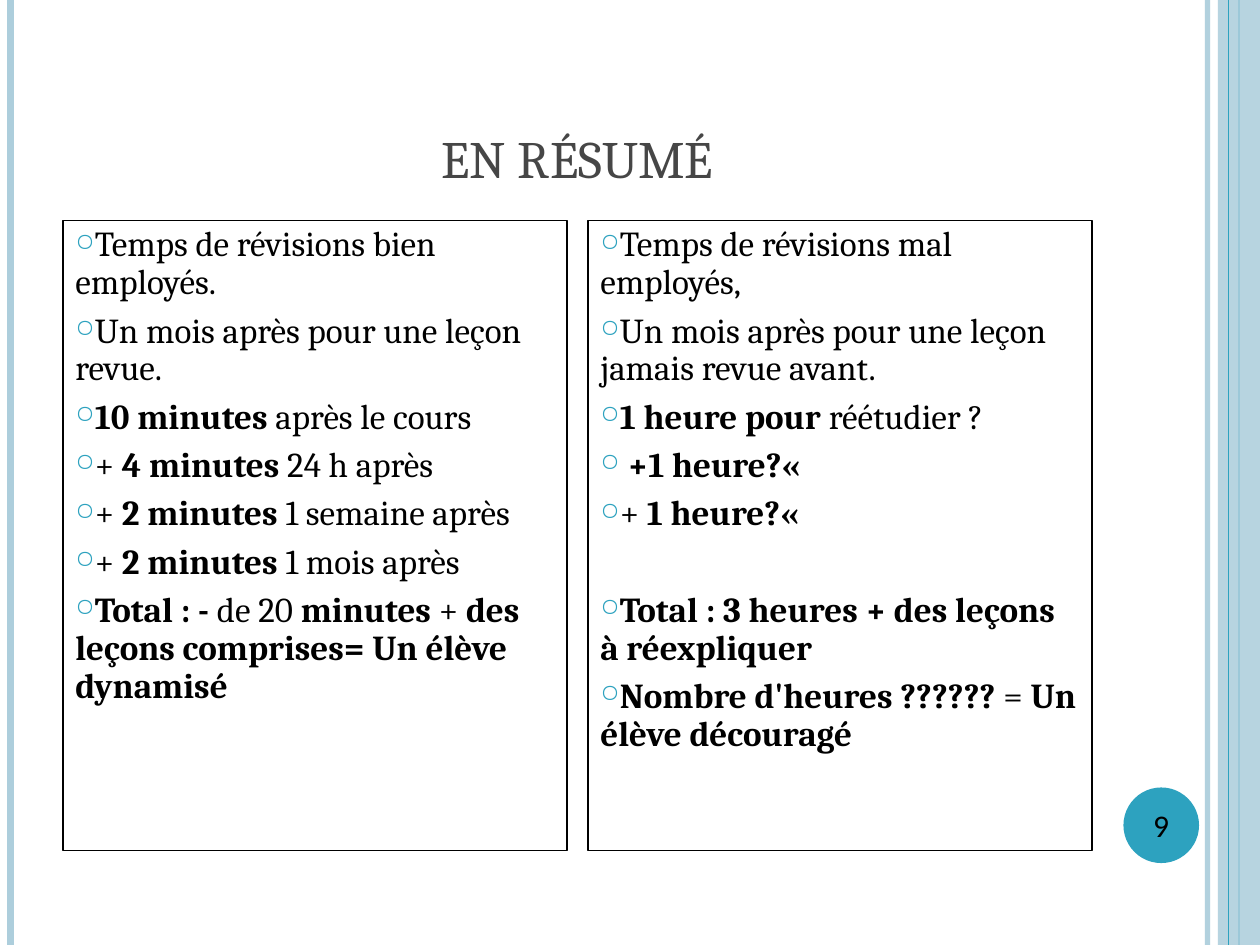
from lxml import etree
from pptx import Presentation
from pptx.dml.color import RGBColor
from pptx.enum.shapes import MSO_CONNECTOR, MSO_SHAPE
from pptx.enum.text import MSO_ANCHOR, PP_ALIGN
from pptx.oxml.ns import qn
from pptx.util import Inches, Pt

LINE = MSO_CONNECTOR.STRAIGHT
RECT, OVAL = MSO_SHAPE.RECTANGLE, MSO_SHAPE.OVAL
TOP, MIDDLE, BOTTOM = MSO_ANCHOR.TOP, MSO_ANCHOR.MIDDLE, MSO_ANCHOR.BOTTOM
LEFT, CENTER = PP_ALIGN.LEFT, PP_ALIGN.CENTER

COLS, ROWS = 120, 90
TITLE_ONLY = 5
TEAL, PALE, INK, GREY = "2DA2BF", "ADCEDC", "000000", "464646"

GOOD = [
    "Temps de révisions bien employés.",
    "Un mois après pour une leçon revue.",
    "*10 minutes *après le cours",
    "+ *4 minutes *24 h après",
    "+ *2 minutes *1 semaine après",
    "+ *2 minutes *1 mois après",
    "*Total : - *de 20 *minutes *+ *des leçons comprises= Un élève dynamisé",
]
BAD = [
    "Temps de révisions mal employés,",
    "Un mois après pour une leçon jamais revue avant.",
    "*1 heure pour *réétudier ?",
    " *+1 heure?« ",
    "+ *1 heure?« ",
    "*Total : 3 heures + des leçons à réexpliquer",
    "*Nombre d'heures ?????? *= *Un élève découragé",
]


def color(text):
    return RGBColor.from_string(text)


def fade(fill, share):
    tone = fill._xPr.find(".//" + qn("a:srgbClr"))
    etree.SubElement(tone, qn("a:alpha"), val=str(share * 1000))


class Deck:
    serif, sans = "Cambria", "Calibri"

    def __init__(self):
        self.prs = Presentation()
        self.prs.slide_width, self.prs.slide_height = Inches(10), Inches(7.5)
        layout = self.prs.slide_layouts[TITLE_ONLY]
        self.slide = self.prs.slides.add_slide(layout)

    def spot(self, col, row, wide, high):
        unit_x = self.prs.slide_width / COLS
        unit_y = self.prs.slide_height / ROWS
        return [round(n * unit) for n, unit in
                zip((col, row, wide, high), (unit_x, unit_y) * 2)]

    def style(self, para, size, tone, face):
        para.font.size, para.font.name = Pt(size), face
        para.font.color.rgb = color(tone)

    def title(self, text, *grid):
        box = self.slide.shapes.title
        box.left, box.top, box.width, box.height = self.spot(*grid)
        box.text_frame.text = text
        box.text_frame.vertical_anchor = BOTTOM
        para = box.text_frame.paragraphs[0]
        para.alignment = CENTER
        self.style(para, 30, GREY, self.serif)

    def rule(self, col, tone, width, share=100):
        x, y, _, high = self.spot(col, 0, 0, ROWS)
        line = self.slide.shapes.add_connector(LINE, x, y, x, high)
        line.line.color.rgb = color(tone)
        line.line.width = Pt(width)
        fade(line.line.fill, share)
        etree.SubElement(line._element.spPr, qn("a:effectLst"))

    def shape(self, kind, grid, fill=None, edge=None, share=100):
        box = self.slide.shapes.add_shape(kind, *self.spot(*grid))
        box.shadow.inherit = False
        if fill:
            box.fill.solid()
            box.fill.fore_color.rgb = color(fill)
            fade(box.fill, share)
        else:
            box.fill.background()
        if edge:
            box.line.color.rgb = color(edge)
            box.line.width = Pt(0.75)
        else:
            box.line.fill.background()
        return box

    def bullet(self, para):
        props = para._p.get_or_add_pPr()
        tint = etree.SubElement(props, qn("a:buClr"))
        etree.SubElement(tint, qn("a:srgbClr"), val=TEAL)
        etree.SubElement(props, qn("a:buSzPct"), val="70000")
        etree.SubElement(props, qn("a:buChar"), char="○")

    def panel(self, items, grid, gaps=None):
        frame = self.shape(RECT, grid, edge=INK).text_frame
        frame.word_wrap, frame.vertical_anchor = True, TOP
        for i, item in enumerate(items):
            para = frame.add_paragraph() if i else frame.paragraphs[0]
            para.alignment, para.line_spacing = LEFT, 0.9
            para.space_before = Pt((gaps or {}).get(i, 6))
            self.bullet(para)
            self.style(para, 20, INK, self.serif)
            for j, part in enumerate(item.split("*")):
                if part:
                    run = para.add_run()
                    run.text, run.font.bold = part, j % 2 == 1

    def badge(self, text, grid):
        frame = self.shape(OVAL, grid, fill=TEAL).text_frame
        frame.word_wrap, frame.vertical_anchor = False, MIDDLE
        frame.text = text
        para = frame.paragraphs[0]
        para.alignment = CENTER
        self.style(para, 18, INK, self.sans)


def main():
    deck = Deck()
    deck.rule(115, PALE, 3, 93)
    deck.rule(1, PALE, 4.5)
    deck.rule(118, TEAL, 1.5)
    deck.shape(RECT, (116, 0, 4, ROWS), fill=PALE, share=87)
    deck.rule(117, TEAL, 0.75)
    deck.title("EN RÉSUMÉ", 6, 3.6, 98, 15)
    deck.panel(GOOD, (6, 21, 48, 60))
    deck.panel(BAD, (56, 21, 48, 60), gaps={5: 33.5})
    deck.badge("9", (107, 75, 7.2, 7.2))
    deck.prs.save("out.pptx")


if __name__ == "__main__":
    main()
